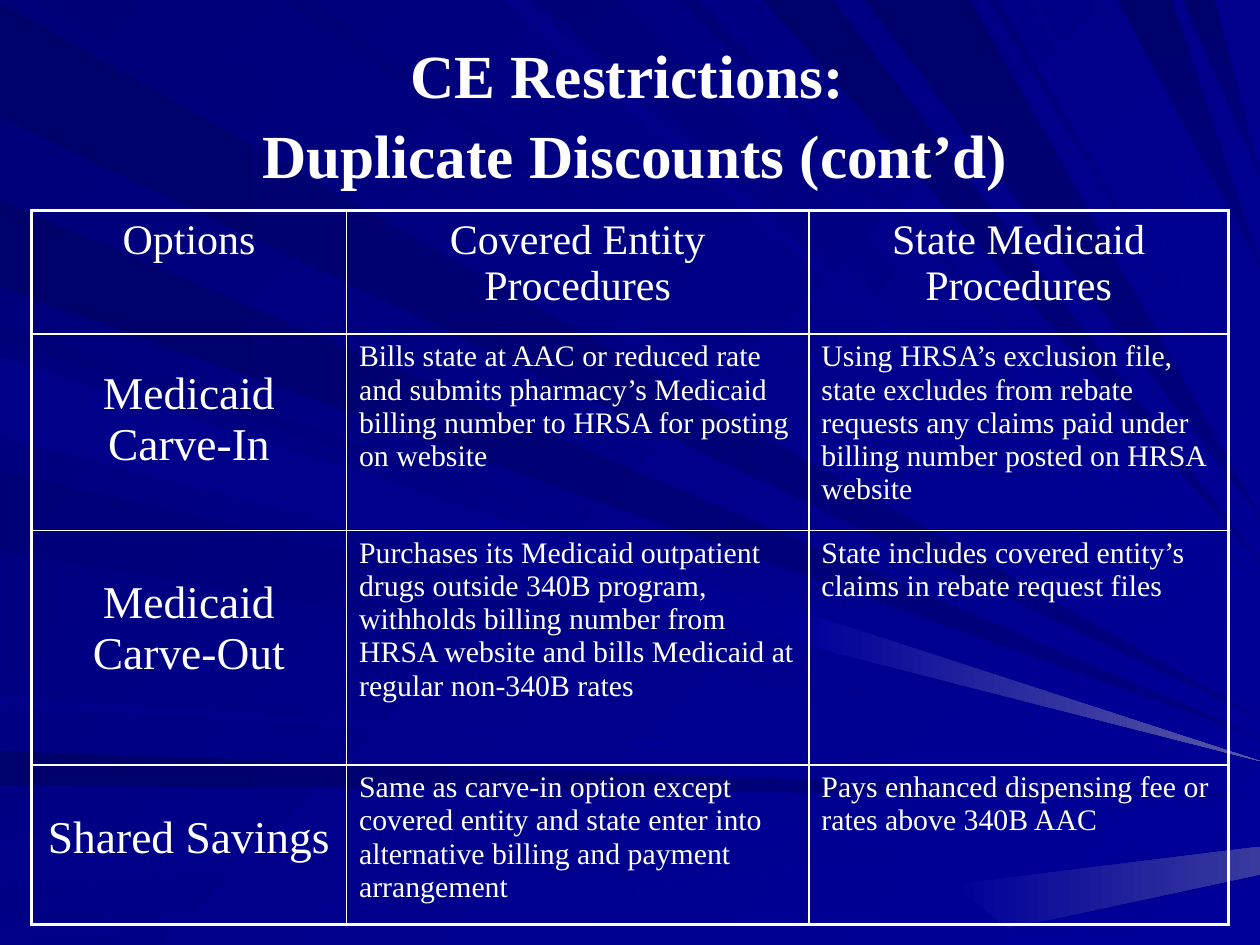
from dataclasses import dataclass
from lxml import etree
from pptx import Presentation
from pptx.dml.color import RGBColor
from pptx.enum.text import MSO_ANCHOR, PP_ALIGN
from pptx.oxml.ns import qn
from pptx.util import Inches, Pt

CENTER, LEFT = PP_ALIGN.CENTER, PP_ALIGN.LEFT
MIDDLE, TOP = MSO_ANCHOR.MIDDLE, MSO_ANCHOR.TOP
GRID_COLUMNS, GRID_ROWS = 10, 7.5


@dataclass(frozen=True)
class Theme:
    font: str = "Times New Roman"
    ink: str = "FFFFFF"
    backdrop: tuple = ("000078", "000099")
    dusk: tuple = ("00006B", "000080")
    glow: tuple = ("000076", "000099")
    bright: tuple = ("000088", "000099")
    flare: tuple = ("000099", "5A5AA6")
    haze: tuple = ("000099", "39399E")
    title: int = 35
    heading: int = 24
    option: int = 26
    body: int = 17
    frame: float = 2.25
    rule: float = 1


THEME = Theme()

LEFT_RAYS = [
    (0.02, 0.93, 5.7, THEME.dusk),
    (5.96, 6.23, 6.32, THEME.dusk),
    (6.65, 7.04, 6.47, THEME.bright),
    (7.35, 7.5, 6.62, THEME.bright),
    (2.58, 2.7, 5.89, THEME.glow),
    (1.59, 2.28, 5.85, THEME.dusk),
    (3.74, 4.37, 6.06, THEME.glow),
    (5.52, 5.6, 6.22, THEME.bright),
    (2.83, 3.47, 6.04, THEME.bright),
]
TOP_RAYS = [
    (0.26, 1.01, 5.63, THEME.glow),
    (2.25, 2.47, 5.5, THEME.glow),
    (3.98, 4.16, 5.18, THEME.bright),
    (4.26, 4.92, 4.93, THEME.glow),
    (5.4, 5.52, 4.63, THEME.glow),
    (6.06, 6.61, 4.46, THEME.dusk),
    (6.86, 7.7, 4.1, THEME.dusk),
    (7.85, 7.92, 3.57, THEME.glow),
    (8.15, 8.24, 3.36, THEME.bright),
    (8.65, 8.72, 2.53, THEME.bright),
    (8.87, 9.3, 2.1, THEME.dusk),
    (9.39, 9.64, 1.4, THEME.dusk),
]
FLARE = [(6.35, 4.85), (6.35, 5.11), (10, 6.04)]
HAZE = [(10, 6.94), (10, 6.72), (7.56, 7.02), (8, 7.37)]

HEADINGS = ["Options", "Covered Entity Procedures", "State Medicaid Procedures"]
OPTIONS = [
    ("Medicaid Carve-In",
     "Bills state at AAC or reduced rate and submits pharmacy’s Medicaid billing number to HRSA for posting on website",
     "Using HRSA’s exclusion file, state excludes from rebate requests any claims paid under billing number posted on HRSA website"),
    ("Medicaid Carve-Out",
     "Purchases its Medicaid outpatient drugs outside 340B program, withholds billing number from HRSA website and bills Medicaid at regular non-340B rates",
     "State includes covered entity’s claims in rebate request files"),
    ("Shared Savings",
     "Same as carve-in option except covered entity and state enter into alternative billing and payment arrangement",
     "Pays enhanced dispensing fee or rates above 340B AAC"),
]
COLUMN_WIDTHS = [2.5, 3.67, 3.33]
ROW_HEIGHTS = [0.98, 1.56, 1.86, 1.27]
OPTION_INSETS = [0.28, 0.38, 0.38]


def paint(fill, colors, angle):
    fill.gradient()
    fill.gradient_angle = -angle % 360
    for stop, color in zip(fill.gradient_stops, colors):
        stop.color.rgb = RGBColor.from_string(color)


def write(frame, text, size, align=LEFT, bold=False, anchor=TOP, spacing=None):
    frame.word_wrap = True
    frame.vertical_anchor = anchor
    para = frame.paragraphs[0]
    para.alignment = align
    para.line_spacing = spacing
    for index, line in enumerate(text.split("\n")):
        if index:
            para.add_line_break()
        span = para.add_run()
        span.text = line
        span.font.name = THEME.font
        span.font.size = Pt(size)
        span.font.bold = bold
        span.font.color.rgb = RGBColor.from_string(THEME.ink)


def draw_rays(page, left, top, width, height):
    def draw(outline, colors, angle=0):
        points = [(left + width * x / GRID_COLUMNS, top + height * y / GRID_ROWS)
                  for x, y in outline]
        builder = page.shapes.build_freeform(*points[0])
        builder.add_line_segments(points[1:], close=True)
        ray = builder.convert_to_shape()
        ray.shadow.inherit = False
        ray.line.fill.background()
        paint(ray.fill, colors, angle)

    for start, end, tip, colors in TOP_RAYS:
        angle = 90 if colors == THEME.dusk else 45
        draw([(start, 0), (end, 0), (GRID_COLUMNS, tip)], colors, angle)
    for start, end, tip, colors in LEFT_RAYS:
        angle = 45 if colors == THEME.glow else 0
        draw([(0, start), (0, end), (GRID_COLUMNS, tip)], colors, angle)
    draw(FLARE, THEME.flare)
    draw(HAZE, THEME.haze)


def draw_title(page, left, top, width, height):
    box = page.shapes.add_textbox(left, top, width, height)
    write(box.text_frame, "CE Restrictions: \nDuplicate Discounts (cont’d)", THEME.title,
          align=CENTER, bold=True, anchor=MIDDLE, spacing=1.09)


def set_borders(cell, outer_sides):
    properties = cell._tc.get_or_add_tcPr()
    for index, side in enumerate("LRTB"):
        weight = THEME.frame if side in outer_sides else THEME.rule
        line = etree.Element(qn(f"a:ln{side}"), w=str(Pt(weight)))
        fill = etree.SubElement(line, qn("a:solidFill"))
        etree.SubElement(fill, qn("a:srgbClr"), val=THEME.ink)
        properties.insert(index, line)


def draw_options_table(page, left, top, width, height):
    rows = [HEADINGS, *OPTIONS]
    last_row, last_column = len(rows) - 1, len(HEADINGS) - 1
    table = page.shapes.add_table(len(rows), len(HEADINGS), left, top, width, height).table
    table.first_row = table.horz_banding = False
    for column, share in zip(table.columns, COLUMN_WIDTHS):
        column.width = round(width * share / sum(COLUMN_WIDTHS))
    for row, share in zip(table.rows, ROW_HEIGHTS):
        row.height = round(height * share / sum(ROW_HEIGHTS))
    for row, texts in enumerate(rows):
        for column, text in enumerate(texts):
            cell = table.cell(row, column)
            cell.fill.background()
            edges = {"L": column == 0, "R": column == last_column,
                     "T": row == 0, "B": row == last_row}
            set_borders(cell, [side for side, outer in edges.items() if outer])
            if row == 0:
                write(cell.text_frame, text, THEME.heading, align=CENTER)
            elif column == 0:
                cell.margin_top = Inches(OPTION_INSETS[row - 1])
                write(cell.text_frame, text, THEME.option, align=CENTER)
            else:
                write(cell.text_frame, text, THEME.body)


def main():
    deck = Presentation()
    deck.slide_width, deck.slide_height = Inches(GRID_COLUMNS), Inches(GRID_ROWS)
    page = deck.slides.add_slide(deck.slide_layouts[6])
    paint(page.background.fill, THEME.backdrop, 45)
    draw_rays(page, 0, 0, deck.slide_width, deck.slide_height)
    draw_title(page, *map(Inches, (0.58, 0.5, 8.92, 0.75)))
    draw_options_table(page, *map(Inches, (0.25, 1.67, 9.5, 5.67)))
    deck.save("out.pptx")


if __name__ == "__main__":
    main()
